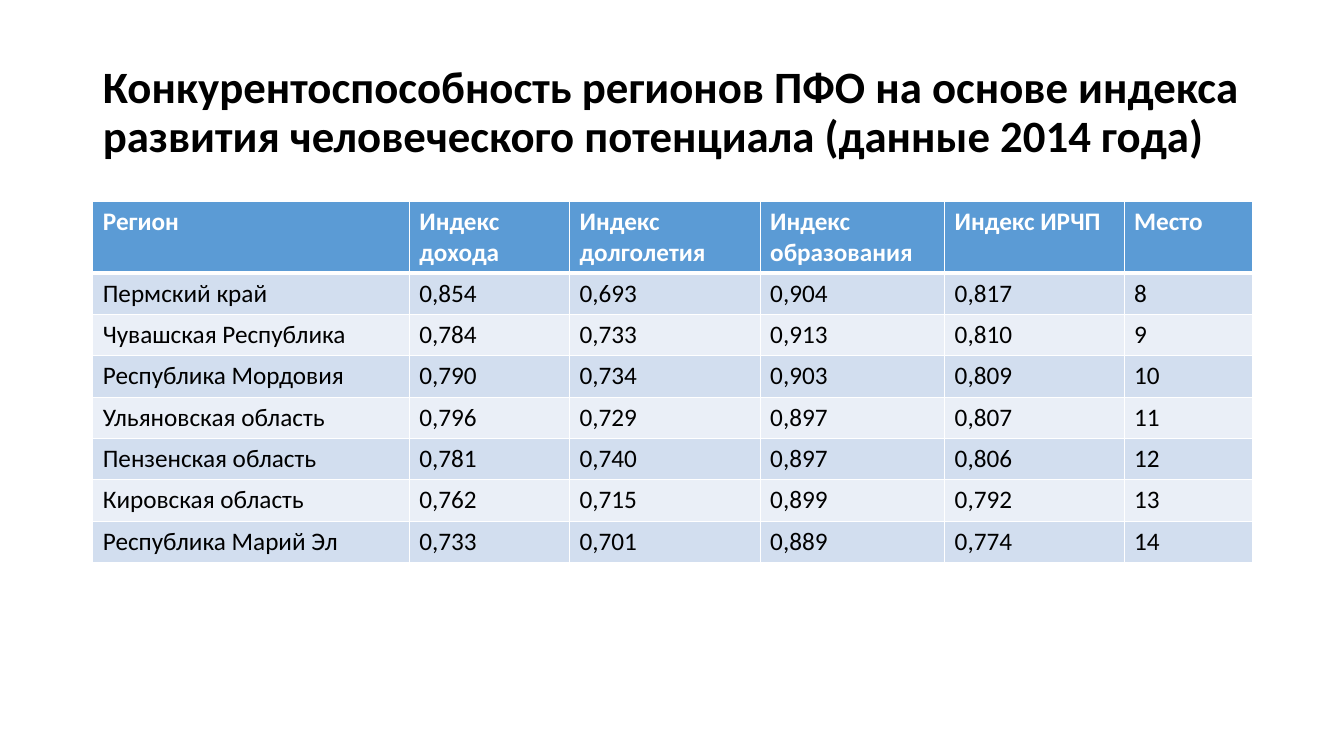
from lxml import etree
from pptx import Presentation, util as u
from pptx.dml.color import RGBColor
from pptx.enum import text
from pptx.oxml import ns

BLACK = RGBColor(0x00, 0x00, 0x00)
WHITE = RGBColor(0xFF, 0xFF, 0xFF)
BLUE = RGBColor(0x5B, 0x9B, 0xD5)
BANDS = RGBColor(0xEA, 0xEF, 0xF7), RGBColor(0xD2, 0xDE, 0xEF)

TITLE = ("Конкурентоспособность регионов ПФО на основе индекса "
         "развития человеческого потенциала (данные 2014 года)")
WIDTHS = 3.14, 1.59, 1.89, 1.83, 1.78, 1.27
ROWS = [
    ("Регион", "Индекс дохода", "Индекс долголетия",
     "Индекс образования", "Индекс ИРЧП", "Место"),
    ("Пермский край", "0,854", "0,693", "0,904", "0,817", "8"),
    ("Чувашская Республика", "0,784", "0,733", "0,913", "0,810", "9"),
    ("Республика Мордовия", "0,790", "0,734", "0,903", "0,809", "10"),
    ("Ульяновская область", "0,796", "0,729", "0,897", "0,807", "11"),
    ("Пензенская область", "0,781", "0,740", "0,897", "0,806", "12"),
    ("Кировская область", "0,762", "0,715", "0,899", "0,792", "13"),
    ("Республика Марий Эл", "0,733", "0,701", "0,889", "0,774", "14"),
]


class Page:
    """Hold the slide and its style, and add a title and a table to it."""

    face = "Calibri"
    left, width = u.Inches(0.92), u.Inches(11.5)

    def __init__(self, deck):
        self.slide = deck.slides.add_slide(deck.slide_layouts[5])

    def style(self, para, size, color, bold):
        font = para.font
        font.name, font.size, font.bold = self.face, u.Pt(size), bold
        font.color.rgb = color

    def title(self, words, top, height):
        box = self.slide.shapes.title
        box.left, box.top = self.left, u.Inches(top)
        box.width, box.height = self.width, u.Inches(height)
        frame = box.text_frame
        frame.text = words
        frame.word_wrap = True
        frame.auto_size = text.MSO_AUTO_SIZE.NONE
        frame.vertical_anchor = text.MSO_ANCHOR.MIDDLE
        para = frame.paragraphs[0]
        para.alignment = text.PP_ALIGN.LEFT
        para.line_spacing = 0.9
        self.style(para, 32, BLACK, True)

    def border(self, cell, side, points):
        props = cell._tc.get_or_add_tcPr()
        line = etree.SubElement(props, ns.qn("a:ln" + side), w=str(u.Pt(points)))
        fill = etree.SubElement(line, ns.qn("a:solidFill"))
        etree.SubElement(fill, ns.qn("a:srgbClr"), val=str(WHITE))

    def table(self, rows, widths, top, height):
        frame = self.slide.shapes.add_table(
            len(rows), len(widths), self.left, u.Inches(top),
            self.width, u.Inches(height * len(rows)))
        grid = frame.table
        for col, width in zip(grid.columns, widths):
            col.width = u.Inches(width)
        for r, row in enumerate(rows):
            grid.rows[r].height = u.Inches(height)
            head = r == 0
            for c, words in enumerate(row):
                cell = grid.cell(r, c)
                cell.text = words
                self.style(cell.text_frame.paragraphs[0], 18,
                           WHITE if head else BLACK, head)
                for side in "LRTB":
                    thick = (r, side) in ((0, "B"), (1, "T"))
                    self.border(cell, side, 3 if thick else 1)
                cell.fill.solid()
                cell.fill.fore_color.rgb = BLUE if head else BANDS[r % 2]


def main():
    deck = Presentation()
    deck.slide_width, deck.slide_height = u.Inches(13.33), u.Inches(7.5)
    page = Page(deck)
    page.title(TITLE, 0.4, 1.45)
    page.table(ROWS, WIDTHS, 2, 0.41)
    deck.save("out.pptx")


if __name__ == "__main__":
    main()
